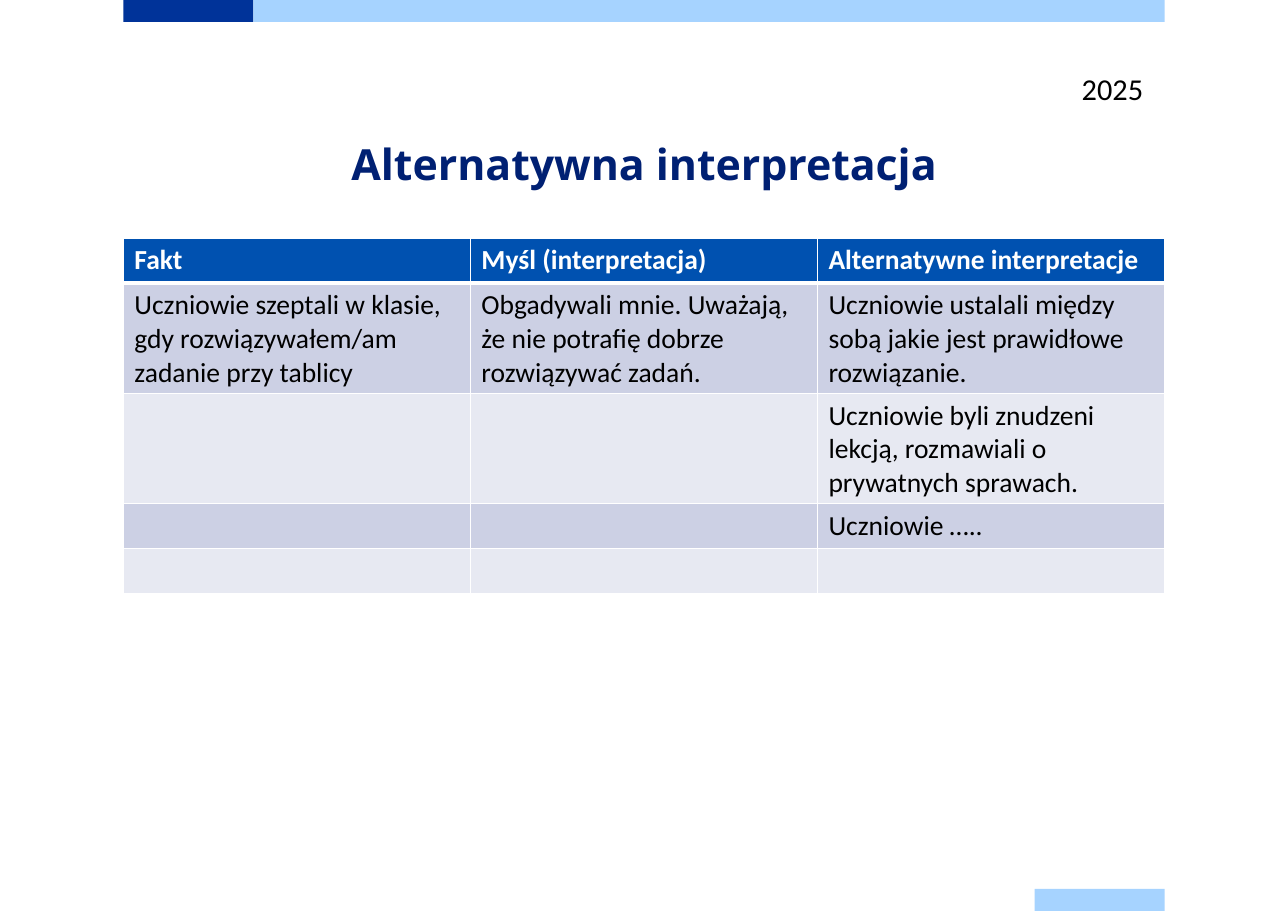
from dataclasses import dataclass

from lxml import etree
from pptx import Presentation
from pptx.dml.color import RGBColor
from pptx.enum.shapes import MSO_SHAPE
from pptx.enum.text import MSO_ANCHOR, MSO_AUTO_SIZE, PP_ALIGN
from pptx.oxml.ns import qn
from pptx.util import Pt

RECTANGLE = MSO_SHAPE.RECTANGLE
TOP = MSO_ANCHOR.TOP
NO_AUTOFIT = MSO_AUTO_SIZE.NONE
CENTER = PP_ALIGN.CENTER

EMU_PER_PX = 9144  # 100 px to the inch
TITLE_ONLY = 5
BODY_FONT = "Calibri"
TITLE_FONT = "Open Sans"
COLORS = {
    "navy": "003399",
    "sky": "A6D3FF",
    "title": "002073",
    "header": "0051B0",
    "band_dark": "CCD0E4",
    "band_light": "E7E9F2",
    "white": "FFFFFF",
    "black": "000000",
}


@dataclass
class Bar:
    left: int
    top: int
    width: int
    color: str
    height: int = 20


BARS = [
    Bar(112, 0, 118, "navy"),
    Bar(230, 0, 827, "sky"),
    Bar(939, 807, 118, "sky"),
]

ROWS = [
    ("Fakt", "Myśl (interpretacja)", "Alternatywne interpretacje"),
    (
        "Uczniowie szeptali w klasie, gdy rozwiązywałem/am zadanie przy tablicy",
        "Obgadywali mnie. Uważają, że nie potrafię dobrze rozwiązywać zadań.",
        "Uczniowie ustalali między sobą jakie jest prawidłowe rozwiązanie.",
    ),
    ("", "", "Uczniowie byli znudzeni lekcją, rozmawiali o prywatnych sprawach."),
    ("", "", "Uczniowie ….."),
    ("", "", ""),
]


def px(length: int) -> int:
    return length * EMU_PER_PX


def rgb(name: str) -> RGBColor:
    return RGBColor.from_string(COLORS[name])


def set_font(para, name: str, size: float, color: str, bold: bool = False) -> None:
    para.font.name = name
    para.font.size = Pt(size)
    para.font.bold = bold
    para.font.color.rgb = rgb(color)


def place(shape, left: int, top: int, width: int, height: int) -> None:
    shape.left, shape.top = px(left), px(top)
    shape.width, shape.height = px(width), px(height)


def add_bar(page, bar: Bar) -> None:
    box = page.shapes.add_shape(
        RECTANGLE, px(bar.left), px(bar.top), px(bar.width), px(bar.height)
    )
    box.shadow.inherit = False
    box.fill.solid()
    box.fill.fore_color.rgb = rgb(bar.color)
    box.line.fill.background()


def add_title(page, text: str) -> None:
    title = page.shapes.title
    place(title, 112, 122, 945, 118)
    frame = title.text_frame
    frame.text = text
    frame.auto_size = NO_AUTOFIT
    frame.vertical_anchor = TOP
    frame.margin_left = frame.margin_right = 0
    frame.margin_top = frame.margin_bottom = 0
    para = frame.paragraphs[0]
    para.alignment = CENTER
    para.line_spacing = Pt(36)
    set_font(para, TITLE_FONT, 28, "title", bold=True)


def add_year(page, text: str) -> None:
    box = page.shapes.add_textbox(px(972), px(59), px(197), px(40))
    box.text_frame.word_wrap = True
    box.text_frame.text = text
    set_font(box.text_frame.paragraphs[0], BODY_FONT, 19.8, "black")


def add_borders(cell, row: int) -> None:
    # The rule under the header is thicker than the rest
    widths = {"lnL": 1, "lnR": 1, "lnT": 3 if row == 1 else 1, "lnB": 3 if row == 0 else 1}
    properties = cell._tc.get_or_add_tcPr()
    for tag, width in widths.items():
        line = etree.SubElement(properties, qn(f"a:{tag}"), w=str(Pt(width)))
        fill = etree.SubElement(line, qn("a:solidFill"))
        etree.SubElement(fill, qn("a:srgbClr"), val=COLORS["white"])


def fill_cell(cell, row: int, text: str) -> None:
    header = row == 0
    add_borders(cell, row)
    band = "band_dark" if row % 2 else "band_light"
    cell.fill.solid()
    cell.fill.fore_color.rgb = rgb("header" if header else band)
    cell.text = text
    color = "white" if header else "black"
    set_font(cell.text_frame.paragraphs[0], BODY_FONT, 18, color, bold=header)


def add_interpretations(page) -> None:
    row_height = 41
    columns = len(ROWS[0])
    table = page.shapes.add_table(
        len(ROWS), columns, px(112), px(216), px(945), px(row_height * len(ROWS))
    ).table
    for row, texts in enumerate(ROWS):
        for column, text in enumerate(texts):
            fill_cell(table.cell(row, column), row, text)


def main() -> None:
    deck = Presentation()
    deck.slide_width, deck.slide_height = px(1169), px(827)
    page = deck.slides.add_slide(deck.slide_layouts[TITLE_ONLY])

    # Decorative bars
    for bar in BARS:
        add_bar(page, bar)

    # Heading and year
    add_title(page, "Alternatywna interpretacja")
    add_year(page, "2025")

    # Table of facts, thoughts and alternatives
    add_interpretations(page)

    deck.save("out.pptx")


if __name__ == "__main__":
    main()
